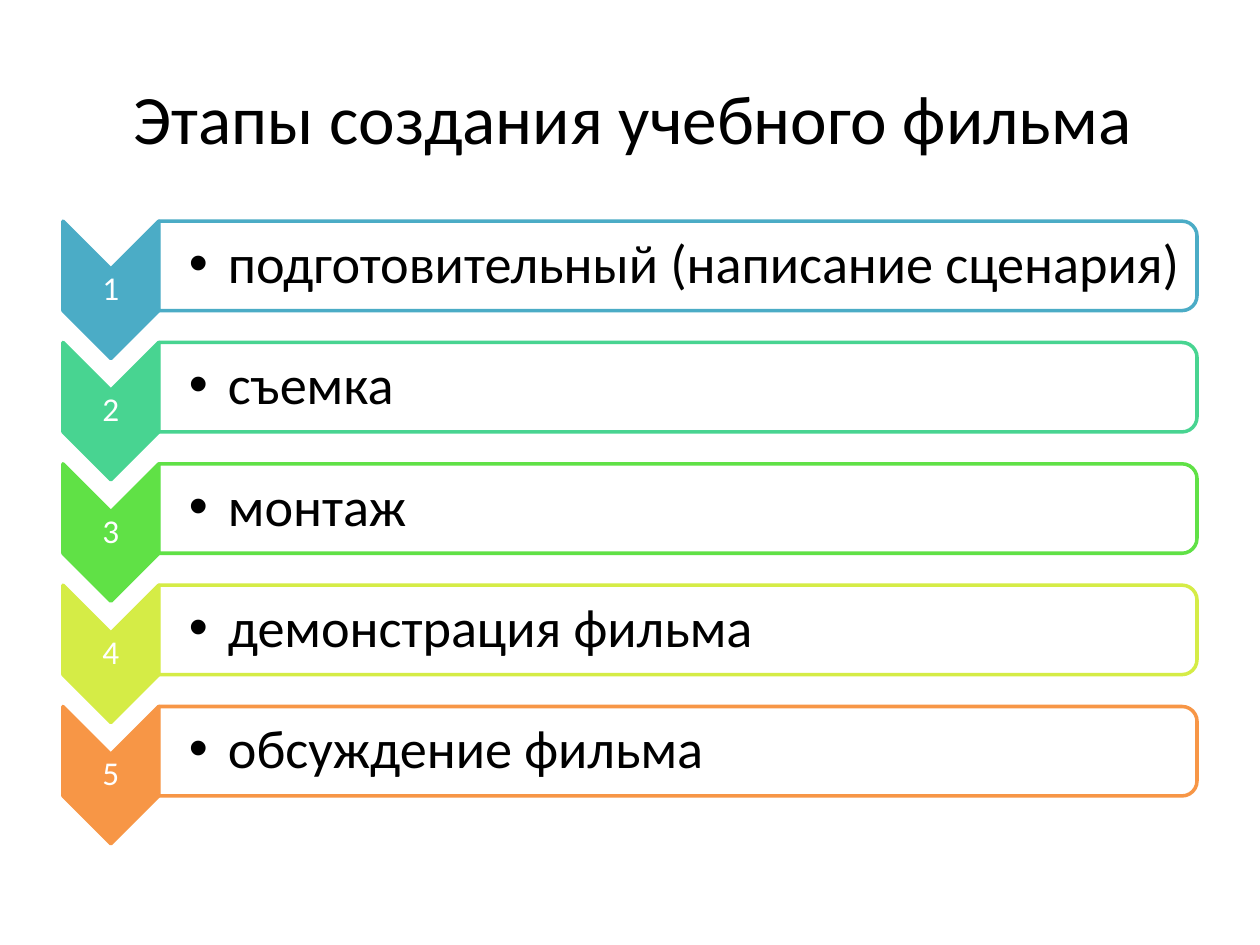
from lxml.etree import SubElement
from pptx import Presentation
from pptx.dml.color import RGBColor
from pptx.enum.shapes import MSO_SHAPE
from pptx.enum.text import MSO_ANCHOR, PP_ALIGN
from pptx.oxml.ns import qn
from pptx.util import Inches, Pt

BLACK = RGBColor(0x00, 0x00, 0x00)
WHITE = RGBColor(0xFF, 0xFF, 0xFF)
TEAL = RGBColor(0x4B, 0xAC, 0xC6)
MINT = RGBColor(0x48, 0xD4, 0x91)
GREEN = RGBColor(0x60, 0xE1, 0x46)
LIME = RGBColor(0xD5, 0xEC, 0x46)
ORANGE = RGBColor(0xF7, 0x96, 0x46)

STAGES = [
    ("подготовительный (написание сценария)", TEAL),
    ("съемка", MINT),
    ("монтаж", GREEN),
    ("демонстрация фильма", LIME),
    ("обсуждение фильма", ORANGE),
]
COLS, ROWS = 100, 75
PITCH = 9.63


class Deck:
    """Holds the slide, its grid of COLS by ROWS cells and the text style."""

    font = "Calibri"

    def __init__(self):
        self.prs = Presentation()
        self.prs.slide_width, self.prs.slide_height = Inches(10), Inches(7.5)
        self.slide = self.prs.slides.add_slide(self.prs.slide_layouts[6])

    def box(self, x, y, w, h):
        """Turn grid cells into slide lengths."""
        col, row = self.prs.slide_width / COLS, self.prs.slide_height / ROWS
        return [round(n) for n in (x * col, y * row, w * col, h * row)]

    def text(self, words, x, y, w, h, size, color=BLACK, pad=(0.1, 0.05),
             align=PP_ALIGN.CENTER, spacing=1.0):
        """Add a middle-anchored line; pad is the left inset and the others."""
        frame = self.slide.shapes.add_textbox(*self.box(x, y, w, h)).text_frame
        frame.word_wrap = True
        frame.vertical_anchor = MSO_ANCHOR.MIDDLE
        left, rest = pad
        frame.margin_left = Inches(left)
        frame.margin_right = frame.margin_top = frame.margin_bottom = Inches(rest)
        para = frame.paragraphs[0]
        para.text, para.alignment, para.line_spacing = words, align, spacing
        para.font.name, para.font.size = self.font, Pt(size)
        para.font.color.rgb = color
        return para

    def bullet(self, words, x, y, w, h, size):
        para = self.text(words, x, y, w, h, size, pad=(0.24, 0.02),
                         align=PP_ALIGN.LEFT, spacing=0.9)
        para.level = 1
        props = para._p.get_or_add_pPr()
        indent = Inches(0.31)
        props.set("marL", str(indent))
        props.set("indent", str(-indent))
        SubElement(props, qn("a:buFont")).set("typeface", "Arial")
        SubElement(props, qn("a:buChar")).set("char", "•")

    def turned(self, kind, x, y, w, h, fill, line):
        """Add a shape turned by 90 degrees that covers the given cells."""
        shift = (w - h) / 2
        shape = self.slide.shapes.add_shape(
            kind, *self.box(x + shift, y - shift, h, w))
        shape.rotation = 90
        shape.shadow.inherit = False
        shape.fill.solid()
        shape.fill.fore_color.rgb = fill
        shape.line.color.rgb = line
        shape.line.width = Pt(2)
        return shape

    def stage(self, num, words, color, y):
        """Add one numbered chevron and its bar, starting at row y."""
        self.turned(MSO_SHAPE.CHEVRON, 5, y, 7.6, 10.9, color, color)
        self.text(str(num), 5, y + 3.8, 7.6, 3.3, 19, WHITE,
                  pad=(0.01, 0.01), spacing=0.9)
        bar = self.turned(MSO_SHAPE.ROUND_2_SAME_RECTANGLE,
                          12.6, y, 82.4, 7.1, WHITE, color)
        tint = bar.fill._xPr.find(f".//{qn('a:srgbClr')}")
        SubElement(tint, qn("a:alpha")).set("val", "90000")
        self.bullet(words, 12.6, y + 0.35, 82, 6.4, 31)


def main():
    deck = Deck()
    deck.text("Этапы создания учебного фильма", 5, 3, 90, 12.5, 39.6)
    for i, (words, color) in enumerate(STAGES):
        deck.stage(i + 1, words, color, 17.55 + i * PITCH)
    deck.prs.save("out.pptx")


if __name__ == "__main__":
    main()
